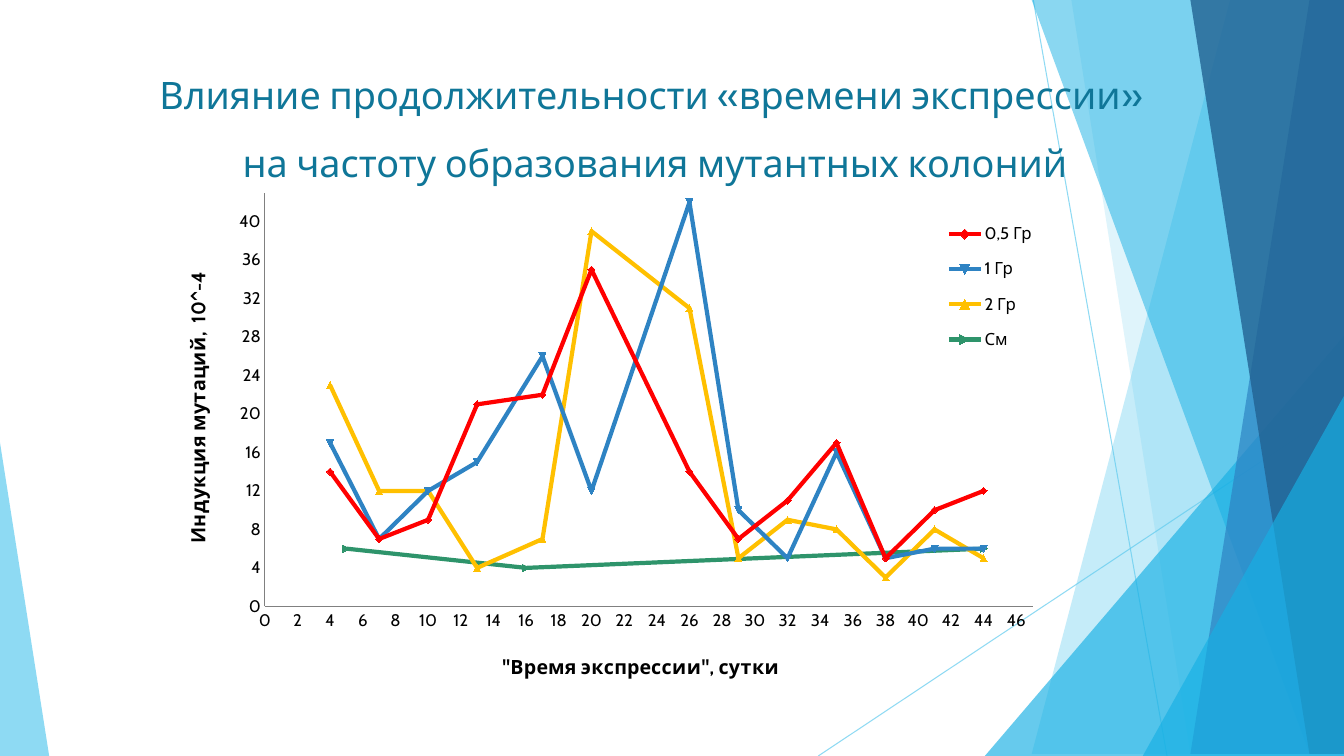
from lxml import etree
from pptx import Presentation
from pptx.chart.data import XyChartData
from pptx.dml.color import RGBColor
from pptx.enum.chart import (XL_CHART_TYPE, XL_LEGEND_POSITION,
                             XL_MARKER_STYLE, XL_TICK_MARK)
from pptx.enum.shapes import MSO_CONNECTOR, MSO_SHAPE
from pptx.enum.text import MSO_ANCHOR, PP_ALIGN
from pptx.oxml.ns import qn
from pptx.util import Cm, Pt

SMOOTH = XL_CHART_TYPE.XY_SCATTER_SMOOTH
BOTTOM = XL_LEGEND_POSITION.BOTTOM
AUTO_MARKER = XL_MARKER_STYLE.AUTOMATIC
NO_TICK = XL_TICK_MARK.NONE
STRAIGHT = MSO_CONNECTOR.STRAIGHT
TRIANGLE = MSO_SHAPE.ISOSCELES_TRIANGLE
MIDDLE = MSO_ANCHOR.MIDDLE
CENTER = PP_ALIGN.CENTER

BLACK = RGBColor(0x00, 0x00, 0x00)
GRAY = RGBColor(0x80, 0x80, 0x80)
TEAL = RGBColor(0x0F, 0x76, 0x98)
SKY = RGBColor(0x5F, 0xCB, 0xEF)
CYAN = RGBColor(0x17, 0xB0, 0xE4)
BLUE = RGBColor(0x2E, 0x83, 0xC3)
NAVY = RGBColor(0x22, 0x62, 0x92)
RED = RGBColor(0xFF, 0x00, 0x00)
AMBER = RGBColor(0xFF, 0xC0, 0x00)
GREEN = RGBColor(0x2E, 0x94, 0x6B)

FONT = "Cabin"
WIDTH, HEIGHT = 33.87, 19.05  # cm

TITLE = ["Влияние продолжительности «времени экспрессии» ",
         "на частоту образования мутантных колоний"]
TITLE_BOX = (3.02, 1.12, 26.97, 3.66)

DAYS = [4, 7, 10, 13, 17, 20, 26, 29, 32, 35, 38, 41, 44]
SERIES = [
    ("0,5 Гр", RED, DAYS, [14, 7, 9, 21, 22, 35, 14, 7, 11, 17, 5, 10, 12]),
    ("1 Гр", BLUE, DAYS, [17, 7, 12, 15, 26, 12, 42, 10, 5, 16, 5, 6, 6]),
    ("2 Гр", AMBER, DAYS, [23, 12, 12, 4, 7, 39, 31, 5, 9, 8, 3, 8, 5]),
    ("См", GREEN, [5, 16, 44], [6, 4, 6]),
]
CHART_BOX = (3.84, 3.91, 23.6, 13.54)
# Axis title, maximum, title position as fractions of the chart, rotation
X_AXIS = ('"Время экспрессии", сутки', 47, (0.37, 0.92), "0")
Y_AXIS = ("Индукция мутаций,  10^-4", 43, (0.03, 0.21), "-5400000")
PLOT_AREA = (0.12, 0.07, 0.82, 0.77)
LEGEND_AREA = (0.84, 0.1, 0.11, 0.29)

# Decoration in cm, back to front
RAYS = [((26.04, 0), (29.41, HEIGHT)), ((WIDTH, 10.24), (20.62, HEIGHT))]
# Band: left edge at the top and at the bottom; it runs to the right side
# Wedge: left, top, width, apex; it stands on the bottom side
DECOR = [
    ("band", (31.19, 25.5), SKY, 36),
    ("band", (26.67, 30.05), SKY, 20),
    ("wedge", (24.82, 8.46, 9.05, 1), CYAN, 66),
    ("band", (25.93, 32.79), CYAN, 50),
    ("band", (33.1, 30.28), BLUE, 70),
    ("band", (30.38, 33.48), NAVY, 80),
    ("wedge", (28.8, 9.98, 5.07, 1), CYAN, 66),
    ("wedge", (0, 11.15, 1.24, 0), SKY, 70),
]


def cm(values):
    return [Cm(v) for v in values]


def set_alpha(sp, percent):
    color = sp._element.spPr.find(".//" + qn("a:srgbClr"))
    etree.SubElement(color, qn("a:alpha"), val=str(percent * 1000))


def add_ray(shapes, start, end):
    ray = shapes.add_connector(STRAIGHT, *cm(start + end))
    ray.line.color.rgb = SKY
    ray.line.width = Pt(0.75)
    set_alpha(ray, 70)
    etree.SubElement(ray._element.spPr, qn("a:effectLst"))


def add_decor(shapes, kind, geometry, color, alpha):
    if kind == "band":
        top_x, bottom_x = geometry
        builder = shapes.build_freeform(top_x, 0, scale=float(Cm(1)))
        builder.add_line_segments(
            [(WIDTH, 0), (WIDTH, HEIGHT), (bottom_x, HEIGHT)], close=True)
        sp = builder.convert_to_shape()
    else:
        left, top, width, apex = geometry
        sp = shapes.add_shape(TRIANGLE, *cm((left, top, width, HEIGHT - top)))
        sp.adjustments[0] = apex
    sp.shadow.inherit = False
    sp.fill.solid()
    sp.fill.fore_color.rgb = color
    sp.line.fill.background()
    set_alpha(sp, alpha)


def add_title(shapes):
    tf = shapes.add_textbox(*cm(TITLE_BOX)).text_frame
    tf.word_wrap = True
    tf.vertical_anchor = MIDDLE
    p = tf.paragraphs[0]
    p.alignment = CENTER
    p.line_spacing = 1.5
    for i, line in enumerate(TITLE):
        if i:
            p.add_line_break()
        r = p.add_run()
        r.text = line
        style_font(r.font, 27, TEAL)


def style_font(font, size, color=BLACK, bold=False):
    font.name = FONT
    font.size = Pt(size)
    font.bold = bold
    font.color.rgb = color


def set_layout(parent, index, area, inner=False):
    """Fix a chart part at fractions (x, y[, w, h]) of the chart."""
    layout = parent.find(qn("c:layout"))
    if layout is None:
        layout = etree.Element(qn("c:layout"))
        parent.insert(index, layout)
    manual = etree.SubElement(layout, qn("c:manualLayout"))
    if inner:
        etree.SubElement(manual, qn("c:layoutTarget"), val="inner")
    for tag in ("xMode", "yMode"):
        etree.SubElement(manual, qn("c:" + tag), val="edge")
    for tag, value in zip("xywh", area):
        etree.SubElement(manual, qn("c:" + tag), val=str(value))


def style_axis(axis, title, maximum, position, rotation):
    axis.minimum_scale, axis.maximum_scale, axis.major_unit = 0, maximum, 2
    axis.has_major_gridlines = False
    axis.major_tick_mark = axis.minor_tick_mark = NO_TICK
    axis.format.line.color.rgb = GRAY
    axis.format.line.width = Pt(0.75)
    style_font(axis.tick_labels.font, 12)
    tf = axis.axis_title.text_frame
    r = tf.paragraphs[0].add_run()
    r.text = title
    style_font(r.font, 14, bold=True)
    element = axis.axis_title._element
    element.find(".//" + qn("a:bodyPr")).set("rot", rotation)
    set_layout(element, 1, position)


def add_mutation_chart(shapes):
    data = XyChartData()
    for name, _, days, values in SERIES:
        series = data.add_series(name)
        for day, value in zip(days, values):
            series.add_data_point(day, value)
    chart = shapes.add_chart(SMOOTH, *cm(CHART_BOX), data).chart
    chart.has_title = False
    style_font(chart.font, 10)
    plot = chart.plots[0]
    plot.vary_by_categories = False
    for i, (series, (_, color, _, _)) in enumerate(zip(plot.series, SERIES), 1):
        series.smooth = True
        series.format.line.color.rgb = color
        series.format.line.width = Pt(3)
        series.marker.style = AUTO_MARKER
        series.marker.size = 5
        # Automatic markers follow the index: diamond, then triangles
        series._element.find(qn("c:idx")).set("val", str(i))
    style_axis(chart.category_axis, *X_AXIS)
    style_axis(chart.value_axis, *Y_AXIS)
    chart.has_legend = True
    chart.legend.position = BOTTOM
    chart.legend.include_in_layout = False
    style_font(chart.legend.font, 12)
    set_layout(chart.legend._element, 1, LEGEND_AREA)
    plot_area = chart._chartSpace.find(".//" + qn("c:plotArea"))
    set_layout(plot_area, 0, PLOT_AREA, inner=True)


def main():
    prs = Presentation()
    prs.slide_width, prs.slide_height = cm((WIDTH, HEIGHT))
    shapes = prs.slides.add_slide(prs.slide_layouts[6]).shapes
    for start, end in RAYS:
        add_ray(shapes, start, end)
    for item in DECOR:
        add_decor(shapes, *item)
    add_title(shapes)
    add_mutation_chart(shapes)
    prs.save("out.pptx")


if __name__ == "__main__":
    main()
